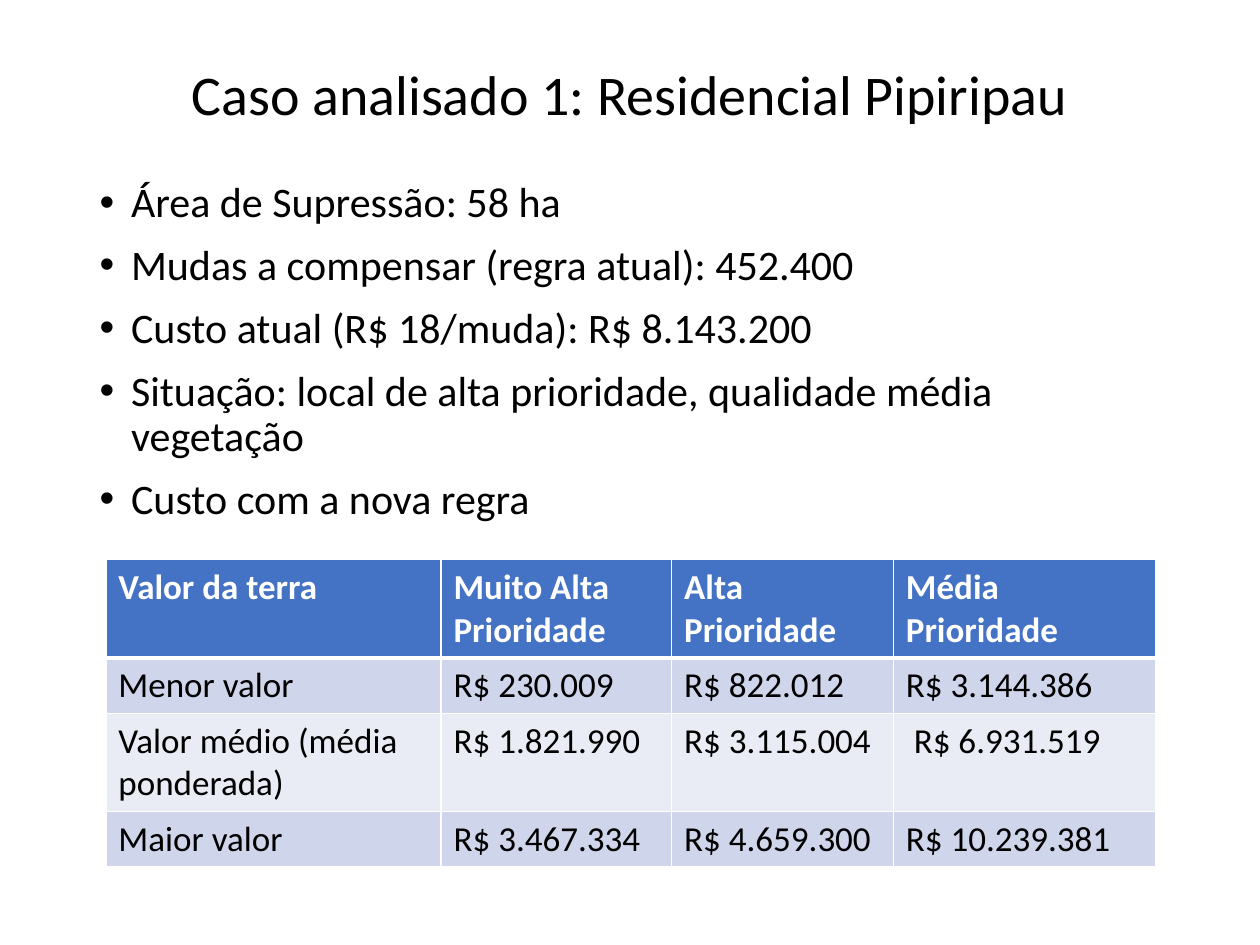
from dataclasses import dataclass

from pptx import Presentation
from pptx.dml.color import RGBColor as RGB
from pptx.enum.text import MSO_ANCHOR as Anchor, MSO_AUTO_SIZE as AutoSize, PP_ALIGN as Align
from pptx.oxml.ns import qn
from pptx.slide import Slide
from pptx.table import _Cell as Cell
from pptx.text.text import TextFrame, _Paragraph as Paragraph
from pptx.util import Inches, Pt
from lxml.etree import SubElement


@dataclass(frozen=True)
class Theme:
    font: str = "Calibri"
    title_size: int = 32
    body_size: int = 24
    table_size: int = 20
    text: str = "000000"
    light: str = "FFFFFF"
    header: str = "4472C4"
    bands: tuple[str, str] = ("CFD5EA", "E9EBF5")


@dataclass(frozen=True)
class Box:
    left: float
    top: float
    width: float
    height: float

    def lengths(self) -> tuple[Inches, ...]:
        return tuple(Inches(v) for v in (self.left, self.top, self.width, self.height))


@dataclass(frozen=True)
class LandValueRow:
    label: str
    very_high: str
    high: str
    medium: str
    height: float

    def texts(self) -> tuple[str, ...]:
        return self.label, self.very_high, self.high, self.medium


THEME = Theme()
TITLE_BOX = Box(0.69, 0.4, 8.62, 0.75)
BODY_BOX = Box(0.69, 1.39, 8.62, 6.11)
TABLE_BOX = Box(0.84, 4.44, 8.33, 2.44)
COLUMN_WIDTHS = (2.66, 1.83, 1.76, 2.08)
ONE_LINE, TWO_LINES = 0.44, 0.78

TITLE = "Caso analisado 1: Residencial Pipiripau"
CASE_FACTS = (
    "Área de Supressão: 58 ha",
    "Mudas a compensar (regra atual): 452.400",
    "Custo atual (R$ 18/muda): R$ 8.143.200",
    "Situação: local de alta prioridade, qualidade média vegetação",
    "Custo com a nova regra",
)
LAND_VALUES = (
    LandValueRow("Valor da terra", "Muito Alta Prioridade", "Alta Prioridade", "Média Prioridade", TWO_LINES),
    LandValueRow("Menor valor", "R$ 230.009", "R$ 822.012", "R$ 3.144.386", ONE_LINE),
    LandValueRow("Valor médio (média ponderada)", "R$ 1.821.990", "R$ 3.115.004", " R$ 6.931.519", TWO_LINES),
    LandValueRow("Maior valor", "R$ 3.467.334", "R$ 4.659.300", "R$ 10.239.381", ONE_LINE),
)


def add_run(paragraph: Paragraph, text: str, size: int, color: str = THEME.text, bold: bool = False) -> None:
    run = paragraph.add_run()
    run.text = text
    run.font.name = THEME.font
    run.font.size = Pt(size)
    run.font.bold = bold
    run.font.color.rgb = RGB.from_string(color)


def place_placeholder(slide: Slide, index: int, box: Box, anchor: Anchor) -> TextFrame:
    placeholder = slide.placeholders[index]
    placeholder.left, placeholder.top, placeholder.width, placeholder.height = box.lengths()
    frame = placeholder.text_frame
    frame.auto_size = AutoSize.NONE
    frame.word_wrap = True
    frame.vertical_anchor = anchor
    return frame


def add_title(slide: Slide) -> None:
    heading = place_placeholder(slide, 0, TITLE_BOX, Anchor.MIDDLE).paragraphs[0]
    heading.alignment = Align.CENTER
    heading.line_spacing = 0.9
    add_run(heading, TITLE, THEME.title_size)


def add_case_facts(slide: Slide) -> None:
    frame = place_placeholder(slide, 1, BODY_BOX, Anchor.TOP)
    for number, fact in enumerate(CASE_FACTS):
        item = frame.add_paragraph() if number else frame.paragraphs[0]
        item.line_spacing = 0.9
        item.space_before = Pt(10)
        properties = item._p.get_or_add_pPr()
        properties.set("marL", str(Inches(0.25)))
        properties.set("indent", str(Inches(-0.25)))
        SubElement(properties, qn("a:buFont"), typeface="Arial")
        SubElement(properties, qn("a:buChar"), char="•")
        add_run(item, fact, THEME.body_size)


def set_borders(cell: Cell, top: int, bottom: int) -> None:
    """Draw light borders, with the top and bottom widths in points."""
    properties = cell._tc.get_or_add_tcPr()
    for position, (side, width) in enumerate((("L", 1), ("R", 1), ("T", top), ("B", bottom))):
        line = SubElement(properties, qn(f"a:ln{side}"), w=str(Pt(width)))
        SubElement(SubElement(line, qn("a:solidFill")), qn("a:srgbClr"), val=THEME.light)
        properties.insert(position, line)


def add_land_values(slide: Slide) -> None:
    table = slide.shapes.add_table(len(LAND_VALUES), len(COLUMN_WIDTHS), *TABLE_BOX.lengths()).table
    for column, width in zip(table.columns, COLUMN_WIDTHS):
        column.width = Inches(width)
    for number, (row, values) in enumerate(zip(table.rows, LAND_VALUES)):
        row.height = Inches(values.height)
        is_header = number == 0
        fill = THEME.header if is_header else THEME.bands[(number - 1) % 2]
        color = THEME.light if is_header else THEME.text
        for cell, text in zip(row.cells, values.texts()):
            cell.fill.solid()
            cell.fill.fore_color.rgb = RGB.from_string(fill)
            set_borders(cell, top=3 if number == 1 else 1, bottom=3 if is_header else 1)
            add_run(cell.text_frame.paragraphs[0], text, THEME.table_size, color, is_header)


def main() -> None:
    presentation = Presentation()
    presentation.slide_width, presentation.slide_height = Inches(10), Inches(7.5)
    slide = presentation.slides.add_slide(presentation.slide_layouts[1])
    add_title(slide)
    add_case_facts(slide)
    add_land_values(slide)
    presentation.save("out.pptx")


if __name__ == "__main__":
    main()
